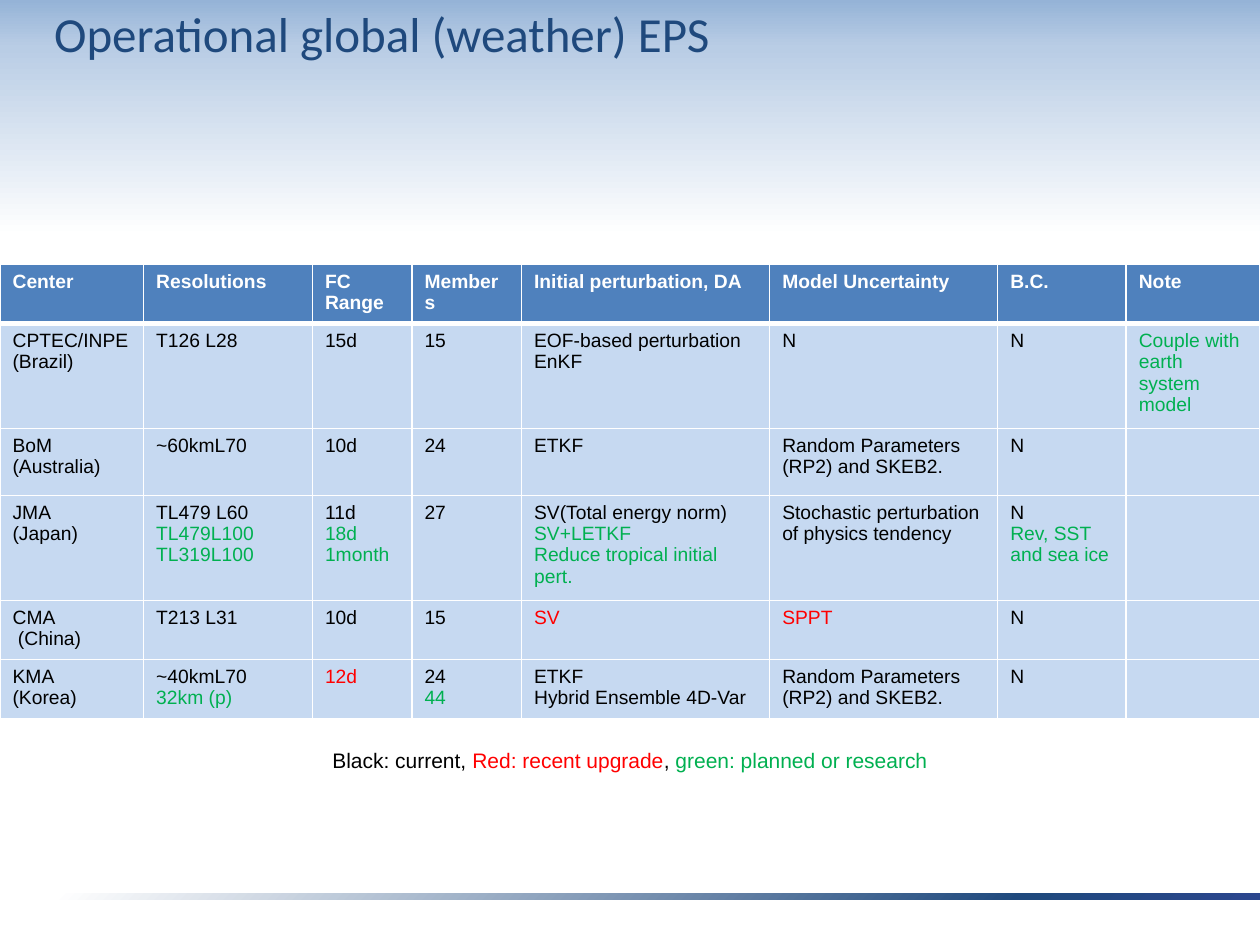
from lxml.etree import SubElement
from pptx import Presentation
from pptx.dml.color import RGBColor
from pptx.enum.shapes import MSO_SHAPE
from pptx.enum.text import MSO_ANCHOR, PP_ALIGN
from pptx.oxml import parse_xml
from pptx.oxml.ns import nsdecls, qn
from pptx.util import Inches, Pt

BLACK, WHITE, RED, GREEN = "000000", "FFFFFF", "FF0000", "00B050"
NAVY, HEADER_BLUE, BODY_BLUE = "1F497D", "4F81BD", "C6D9F1"

COLUMN_WIDTHS = [1.14, 1.34, 0.79, 0.87, 1.97, 1.81, 1.02, 1.06]
ROW_HEIGHTS = [0.22, 0.53, 0.53, 0.53, 0.31, 0.44]
HEADINGS = ["Center", "Resolutions", "FC Range", "Members",
            "Initial perturbation, DA", "Model Uncertainty", "B.C.", "Note"]


def planned(text):
    return text, GREEN


def upgraded(text):
    return text, RED


# Each cell is a list of lines; a plain string is a current (black) entry.
CENTERS = [
    [["CPTEC/INPE", "(Brazil)"], ["T126 L28"], ["15d"], ["15"],
     ["EOF-based perturbation", "EnKF"], ["N"], ["N"],
     [planned("Couple with earth system model")]],
    [["BoM", "(Australia)"], ["~60kmL70"], ["10d"], ["24"], ["ETKF"],
     ["Random Parameters (RP2) and SKEB2."], ["N"], []],
    [["JMA", "(Japan)"],
     ["TL479 L60", planned("TL479L100"), planned("TL319L100")],
     ["11d", planned("18d"), planned("1month")], ["27"],
     ["SV(Total energy norm)", planned("SV+LETKF"),
      planned("Reduce tropical initial pert.")],
     ["Stochastic perturbation of physics tendency"],
     ["N", planned("Rev, SST and sea ice")], []],
    [["CMA", " (China)"], ["T213 L31"], ["10d"], ["15"],
     [upgraded("SV")], [upgraded("SPPT")], ["N"], []],
    [["KMA", "(Korea)"], ["~40kmL70", planned("32km (p)")],
     [upgraded("12d")], ["24", planned("44")],
     ["ETKF", "Hybrid Ensemble 4D-Var"],
     ["Random Parameters (RP2) and SKEB2."], ["N"], []],
]


def rgb(color):
    return RGBColor.from_string(color)


def add_run(paragraph, text, size, color, font="Arial", bold=False):
    run = paragraph.add_run()
    run.text = text
    run.font.size = Pt(size)
    run.font.name = font
    run.font.bold = bold
    run.font.color.rgb = rgb(color)


def set_gradient(owner, stops, direction):
    """Replace the solid fill of a shape or slide by a gradient."""
    stop_xml = "".join(
        f'<a:gs pos="{position * 1000}"><a:srgbClr val="{color}"/></a:gs>'
        for position, color in stops)
    gradient = parse_xml(f'<a:gradFill {nsdecls("a")} rotWithShape="1">'
                         f"<a:gsLst>{stop_xml}</a:gsLst>{direction}</a:gradFill>")
    solid = owner.element.xpath("./p:spPr/a:solidFill | ./p:cSld/p:bg/p:bgPr/a:solidFill")[0]
    solid.getparent().replace(solid, gradient)


def set_background(slide):
    slide.background.fill.solid()
    set_gradient(slide, [(0, "95B3D7"), (5, "B9CDE5"), (25, WHITE)],
                 '<a:lin ang="5400000" scaled="0"/>')


def add_footer_bar(slide):
    bar = slide.shapes.add_shape(MSO_SHAPE.RECTANGLE, Inches(0.46), Inches(7.09),
                                 Inches(9.54), Inches(0.05))
    bar.shadow.inherit = False
    bar.line.fill.background()
    bar.fill.solid()
    set_gradient(bar, [(0, "2B468D"), (20, NAVY), (100, WHITE)],
                 '<a:path path="circle"><a:fillToRect l="100000" t="100000"/></a:path>')


def add_centered_text(slide, left, top, width, height, runs, size,
                      font="Arial", anchor=MSO_ANCHOR.TOP):
    box = slide.shapes.add_textbox(Inches(left), Inches(top), Inches(width), Inches(height))
    frame = box.text_frame
    frame.word_wrap = True
    frame.vertical_anchor = anchor
    paragraph = frame.paragraphs[0]
    paragraph.alignment = PP_ALIGN.CENTER
    for text, color in runs:
        add_run(paragraph, text, size, color, font)


def set_borders(cell, widths):
    properties = cell._tc.get_or_add_tcPr()
    for side, width in widths.items():
        line = SubElement(properties, qn(f"a:ln{side}"), w=str(Pt(width)))
        SubElement(SubElement(line, qn("a:solidFill")), qn("a:srgbClr"), val=WHITE)


def fill_cell(cell, lines, is_header, below_header):
    set_borders(cell, {"L": 1, "R": 1, "T": 3 if below_header else 1,
                       "B": 3 if is_header else 1})
    cell.fill.solid()
    cell.fill.fore_color.rgb = rgb(HEADER_BLUE if is_header else BODY_BLUE)
    frame = cell.text_frame
    for index, line in enumerate(lines):
        text, color = (line, BLACK) if isinstance(line, str) else line
        paragraph = frame.add_paragraph() if index else frame.paragraphs[0]
        add_run(paragraph, text, 11, color, bold=is_header)


def add_center_table(slide):
    rows = [[[(heading, WHITE)] for heading in HEADINGS]] + CENTERS
    table = slide.shapes.add_table(len(rows), len(HEADINGS), Inches(0), Inches(2.1),
                                   Inches(10), Inches(3.05)).table
    for column, width in zip(table.columns, COLUMN_WIDTHS):
        column.width = Inches(width)
    for row, height in zip(table.rows, ROW_HEIGHTS):
        row.height = Inches(height)
    for row_index, row in enumerate(rows):
        for column_index, lines in enumerate(row):
            fill_cell(table.cell(row_index, column_index), lines,
                      row_index == 0, row_index == 1)


def main():
    presentation = Presentation()
    presentation.slide_width = Inches(10)
    presentation.slide_height = Inches(7.5)
    slide = presentation.slides.add_slide(presentation.slide_layouts[6])
    set_background(slide)
    add_footer_bar(slide)
    add_centered_text(slide, 0.04, 0, 5.98, 0.52,
                      [("Operational global (weather) EPS", NAVY)],
                      28, "Calibri", MSO_ANCHOR.MIDDLE)
    add_center_table(slide)
    add_centered_text(slide, 2.4, 5.88, 5.2, 0.3,
                      [("Black: current, ", BLACK), ("Red: recent upgrade", RED),
                       (", ", BLACK), ("green: planned or research", GREEN)], 12)
    presentation.save("out.pptx")


if __name__ == "__main__":
    main()
